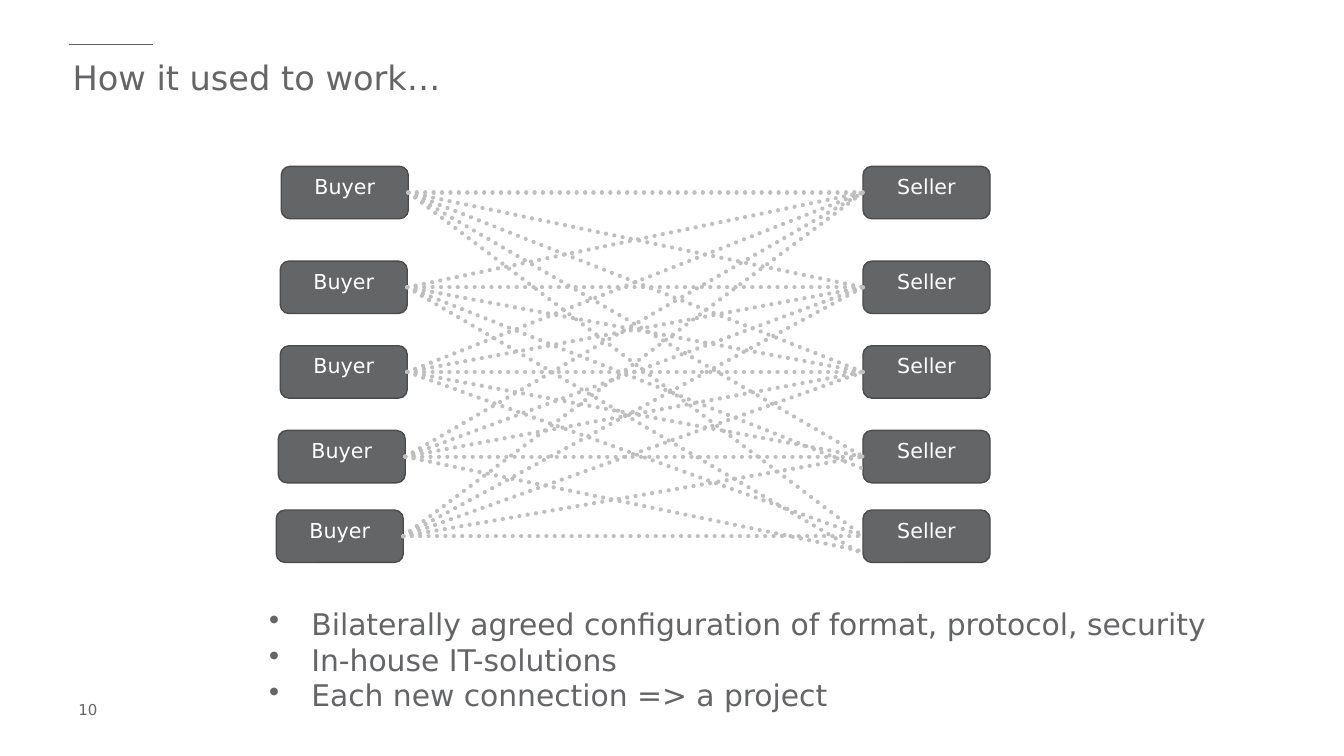
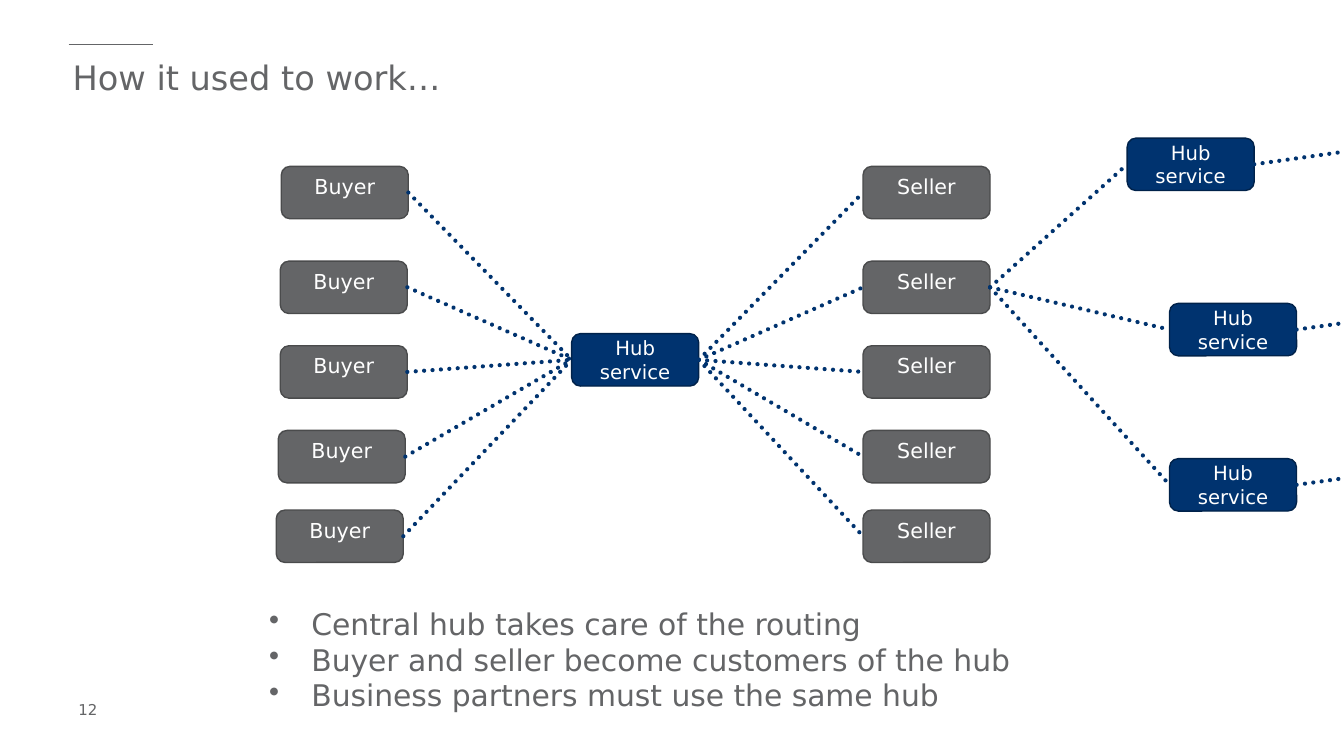
import pptx
import pptx.util
import pptx.dml.color
import pptx.enum.dml
import pptx.enum.shapes
import pptx.enum.text
import pptx.oxml
import pptx.oxml.ns

Inches = pptx.util.Inches
Pt = pptx.util.Pt
qn = pptx.oxml.ns.qn
ALIGN = pptx.enum.text.PP_ALIGN
ANCHOR = pptx.enum.text.MSO_ANCHOR

# Shared style
FONT = "DejaVu Sans"
GREY, GREY_EDGE = "646567", "4A4B4C"
NAVY, NAVY_EDGE = "00336F", "00224A"
LIGHT, WHITE = "BFBFBF", "FFFFFF"
SLIDE_W, SLIDE_H = 13.33, 7.5
MARGIN = 0.68
BOX_W, BOX_H = 1.26, 0.52

# Rows shared by both columns of partners
ROW_TOPS = [1.65, 2.59, 3.43, 4.27, 5.06]
BUYER_LEFTS = [2.79, 2.78, 2.78, 2.76, 2.74]
SELLER_LEFT = 8.56
LEFT_SIDE, RIGHT_SIDE = 1, 3

# (buyer, seller): how far below the middle of the seller the line ends
LOW_ENDS = {(1, 3): 0.12, (1, 4): 0.18, (3, 4): 0.15}
OUTER_HUBS = [(11.18, 1.37), (11.6, 3.01), (11.6, 4.55)]
EXIT_SLOPE = -0.14


def rgb(hex_color):
    return pptx.dml.color.RGBColor.from_string(hex_color)


def write(tf, text, size=14.7, color=GREY, align=ALIGN.LEFT,
          anchor=ANCHOR.TOP, bullet=None):
    """Put each line of text in its own paragraph."""
    tf.word_wrap = True
    tf.vertical_anchor = anchor
    for i, line in enumerate(text.split("\n")):
        p = tf.add_paragraph() if i else tf.paragraphs[0]
        p.alignment = align
        r = p.add_run()
        r.text = line
        r.font.name = FONT
        r.font.size = Pt(size)
        r.font.color.rgb = rgb(color)
        if bullet:
            pPr = p._p.get_or_add_pPr()
            pPr.set("marL", str(Inches(0.42)))
            pPr.set("indent", str(-Inches(0.42)))
            pptx.oxml.ns  # bullet mark sits inside the paragraph properties
            bu = pptx.oxml.xmlchemy.OxmlElement("a:buChar")
            bu.set("char", bullet)
            pPr.append(bu)


def add_text(s, text, left, top, width, height, **fmt):
    tf = s.shapes.add_textbox(Inches(left), Inches(top),
                              Inches(width), Inches(height)).text_frame
    write(tf, text, **fmt)
    return tf


def add_box(s, text, left, top, fill=GREY, edge=GREY_EDGE, **fmt):
    sp = s.shapes.add_shape(pptx.enum.shapes.MSO_SHAPE.ROUNDED_RECTANGLE,
                            Inches(left), Inches(top),
                            Inches(BOX_W), Inches(BOX_H))
    sp.shadow.inherit = False
    sp.fill.solid()
    sp.fill.fore_color.rgb = rgb(fill)
    sp.line.color.rgb = rgb(edge)
    sp.line.width = Pt(1)
    write(sp.text_frame, text, color=WHITE, align=ALIGN.CENTER, **fmt)
    return sp


def add_hub(s, left, top):
    return add_box(s, "Hub service", left, top, fill=NAVY, edge=NAVY_EDGE,
                   size=14, anchor=ANCHOR.MIDDLE)


def add_line(s, start, end, color, width):
    """Draw a straight line between two points given in EMU."""
    cx = s.shapes.add_connector(pptx.enum.shapes.MSO_CONNECTOR.STRAIGHT,
                                *start, *end)
    cx.line.color.rgb = rgb(color)
    cx.line.width = Pt(width)
    cx._element.spPr.append(pptx.oxml.xmlchemy.OxmlElement("a:effectLst"))
    return cx


def add_dots(s, start, end, color):
    cx = add_line(s, start, end, color, 3)
    cx.line.dash_style = pptx.enum.dml.MSO_LINE.ROUND_DOT
    cx._element.spPr.find(qn("a:ln")).set("cap", "rnd")
    return cx


def left_mid(sp):
    return sp.left, sp.top + sp.height // 2


def right_mid(sp):
    return sp.left + sp.width, sp.top + sp.height // 2


def link(s, a, b, color, drop=0):
    """Dotted line from the right side of a to the left side of b."""
    x, y = left_mid(b)
    cx = add_dots(s, right_mid(a), (x, y + Inches(drop)), color)
    cx.begin_connect(a, RIGHT_SIDE)
    if not drop:
        cx.end_connect(b, LEFT_SIDE)


def add_base(prs, number, bullets):
    """Title, rule, page number, points and both columns of partners."""
    s = prs.slides.add_slide(prs.slide_layouts[6])
    add_line(s, (Inches(MARGIN), Inches(0.44)),
             (Inches(1.52), Inches(0.44)), GREY, 1)
    tf = add_text(s, "How it used to work…", MARGIN, 0.52, 11.98, 1.02, size=24)
    tf.margin_left = tf.margin_right = Inches(0.04)
    add_text(s, number, MARGIN, 6.9, 1.36, 0.32, size=10.7)
    add_text(s, bullets, 2.57, 5.96, 10, 1.54, size=21.3, bullet="•")
    buyers = [add_box(s, "Buyer", x, y) for x, y in zip(BUYER_LEFTS, ROW_TOPS)]
    sellers = [add_box(s, "Seller", SELLER_LEFT, y) for y in ROW_TOPS]
    return s, buyers, sellers


def add_bilateral_slide(prs):
    s, buyers, sellers = add_base(
        prs, "10",
        "Bilaterally agreed configuration of format, protocol, security\n"
        "In-house IT-solutions\n"
        "Each new connection => a project")
    for i, buyer in enumerate(buyers):
        for j, seller in enumerate(sellers):
            link(s, buyer, seller, LIGHT, LOW_ENDS.get((i, j), 0))


def add_hub_slide(prs):
    s, buyers, sellers = add_base(
        prs, "12",
        "Central hub takes care of the routing\n"
        "Buyer and seller become customers of the hub\n"
        "Business partners must use the same hub")
    hub = add_hub(s, 5.67, 3.31)
    for buyer in buyers:
        link(s, buyer, hub, NAVY)
    for seller in sellers:
        link(s, hub, seller, NAVY)

    # The second seller also needs other hubs, which lead off the right edge
    for left, top in OUTER_HUBS:
        outer = add_hub(s, left, top)
        link(s, sellers[1], outer, NAVY)
        x, y = right_mid(outer)
        edge = Inches(SLIDE_W)
        cx = add_dots(s, (x, y), (edge, y + int((edge - x) * EXIT_SLOPE)), NAVY)
        cx.begin_connect(outer, RIGHT_SIDE)


def main():
    prs = pptx.Presentation()
    prs.slide_width = Inches(SLIDE_W)
    prs.slide_height = Inches(SLIDE_H)
    add_bilateral_slide(prs)
    add_hub_slide(prs)
    prs.save("out.pptx")


if __name__ == "__main__":
    main()
